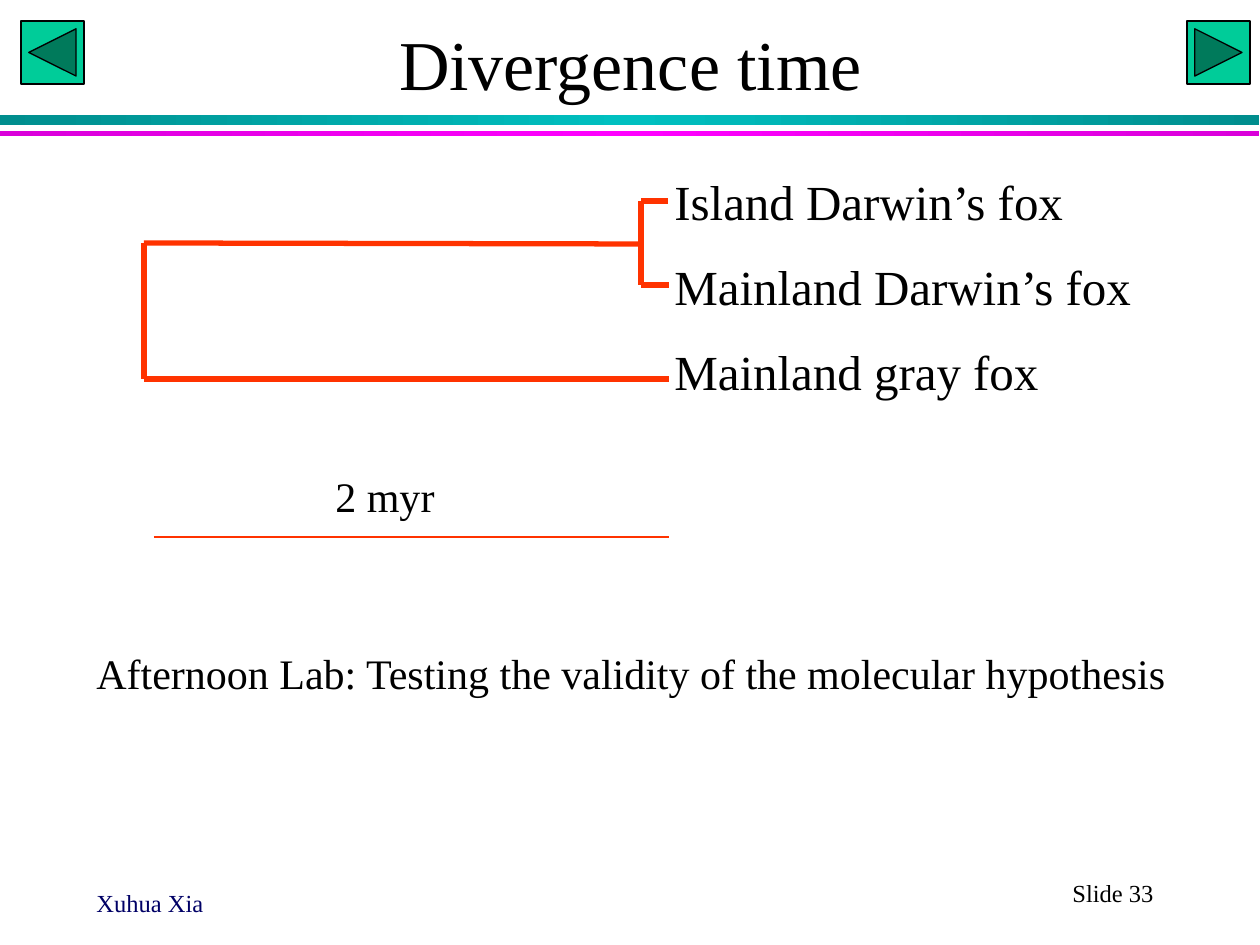
from copy import deepcopy
from typing import NamedTuple

from pptx import Presentation
from pptx import util as u
from pptx.dml.color import RGBColor
from pptx.enum import shapes, text
from pptx.oxml import ns, xmlchemy

PX = 914400 / 126
FONT = "Times New Roman"
BLACK, NAVY, GREEN, RED = "000000", "000066", "00CC99", "FF3300"


class Box(NamedTuple):
    left: int
    top: int
    width: int
    height: int


class Band(NamedTuple):
    box: Box
    edge: str
    middle: str


class Label(NamedTuple):
    box: Box
    lines: list[str]
    size: int
    color: str = BLACK
    align: text.PP_ALIGN = text.PP_ALIGN.LEFT
    lead: int = 0  # space above the first line, in points


class Branch(NamedTuple):
    x1: int
    y1: int
    x2: int
    y2: int
    weight: float = 3


BANDS = [
    Band(Box(0, 115, 1259, 10), "008E8E", "00C0C0"),
    Band(Box(0, 131, 1259, 5), "DA00DA", "FF00FF"),
]

BUTTONS = {
    21: shapes.MSO_SHAPE.ACTION_BUTTON_BACK_OR_PREVIOUS,
    1187: shapes.MSO_SHAPE.ACTION_BUTTON_FORWARD_OR_NEXT,
}

# Landmarks of the tree: root, the Darwin's fox split, and the tips
ROOT_X, SPLIT_X, TIP_X = 144, 641, 669
ISLAND_Y, DARWIN_Y, MAINLAND_Y, GRAY_Y = 201, 244, 285, 379
BRANCHES = [
    Branch(SPLIT_X, ISLAND_Y, TIP_X - 1, ISLAND_Y),
    Branch(SPLIT_X, ISLAND_Y, SPLIT_X, MAINLAND_Y),
    Branch(SPLIT_X, MAINLAND_Y, TIP_X, MAINLAND_Y),
    Branch(SPLIT_X, DARWIN_Y, ROOT_X, DARWIN_Y - 1),
    Branch(ROOT_X, DARWIN_Y - 1, ROOT_X, GRAY_Y),
    Branch(ROOT_X, GRAY_Y, TIP_X, GRAY_Y),
]
TIME_SCALE = Branch(154, 537, TIP_X, 537, 0.75)

LABELS = [
    Label(Box(84, 882, 262, 32), ["Xuhua Xia"], 14, NAVY),
    Label(Box(987, 872, 252, 42), ["Slide 33"], 14, align=text.PP_ALIGN.CENTER),
    Label(
        Box(662, 165, 501, 248),
        ["Island Darwin’s fox", "Mainland Darwin’s fox", "Mainland gray fox"],
        28,
        lead=3,
    ),
    Label(Box(323, 464, 189, 63), ["2 myr"], 24, lead=3),
    Label(
        Box(84, 641, 1111, 63),
        ["Afternoon Lab: Testing the validity of the molecular hypothesis"],
        24,
        lead=3,
    ),
]


def px(length: float) -> u.Emu:
    return u.Emu(round(length * PX))


def place(box: Box) -> list[u.Emu]:
    return [px(length) for length in box]


def rgb(color: str) -> RGBColor:
    return RGBColor.from_string(color)


def format_text(paragraph, size: int, color: str, align: text.PP_ALIGN) -> None:
    paragraph.alignment = align
    for run in paragraph.runs:
        run.font.name = FONT
        run.font.size = u.Pt(size)
        run.font.color.rgb = rgb(color)


def draw_band(slide, band: Band) -> None:
    stripe = slide.shapes.add_shape(shapes.MSO_SHAPE.RECTANGLE, *place(band.box))
    stripe.shadow.inherit = False
    stripe.line.fill.background()
    stripe.fill.gradient()
    stripe.fill.gradient_angle = 0
    # A third stop makes the gradient symmetric
    stop_list = stripe._element.spPr.find(".//" + ns.qn("a:gsLst"))
    stop_list.append(deepcopy(stop_list[0]))
    colors = (band.edge, band.middle, band.edge)
    for stop, position, color in zip(stripe.fill.gradient_stops, (0, 0.5, 1), colors):
        stop.position = position
        stop.color.rgb = rgb(color)


def draw_button(slide, left: int, kind: shapes.MSO_SHAPE) -> None:
    button = slide.shapes.add_shape(kind, *place(Box(left, 21, 63, 63)))
    button.shadow.inherit = False
    button.fill.solid()
    button.fill.fore_color.rgb = rgb(GREEN)
    button.line.color.rgb = rgb(BLACK)
    button.line.width = u.Pt(0.75)


def draw_title(slide, wording: str) -> None:
    title = slide.shapes.title
    title.left, title.top, title.width, title.height = place(Box(95, 0, 1071, 126))
    title.text_frame.text = wording
    title.text_frame.vertical_anchor = text.MSO_ANCHOR.MIDDLE
    format_text(title.text_frame.paragraphs[0], 40, BLACK, text.PP_ALIGN.CENTER)


def draw_branch(slide, branch: Branch) -> None:
    ends = [px(length) for length in branch[:4]]
    line = slide.shapes.add_connector(shapes.MSO_CONNECTOR.STRAIGHT, *ends)
    line.line.color.rgb = rgb(RED)
    line.line.width = u.Pt(branch.weight)
    line._element.spPr.append(xmlchemy.OxmlElement("a:effectLst"))


def draw_label(slide, label: Label) -> None:
    frame = slide.shapes.add_textbox(*place(label.box)).text_frame
    frame.word_wrap = True
    frame.text = "\n".join(label.lines)
    for index, paragraph in enumerate(frame.paragraphs):
        paragraph.space_before = u.Pt(15 if index else label.lead)
        format_text(paragraph, label.size, label.color, label.align)


def main() -> None:
    deck = Presentation()
    deck.slide_width, deck.slide_height = px(1260), px(945)
    slide = deck.slides.add_slide(deck.slide_layouts[5])

    # Header
    for band in BANDS:
        draw_band(slide, band)
    for left, kind in BUTTONS.items():
        draw_button(slide, left, kind)
    draw_title(slide, "Divergence time")

    # Tree with its time scale
    for branch in [*BRANCHES, TIME_SCALE]:
        draw_branch(slide, branch)

    # Species names, captions and footer
    for label in LABELS:
        draw_label(slide, label)

    deck.save("out.pptx")


if __name__ == "__main__":
    main()
